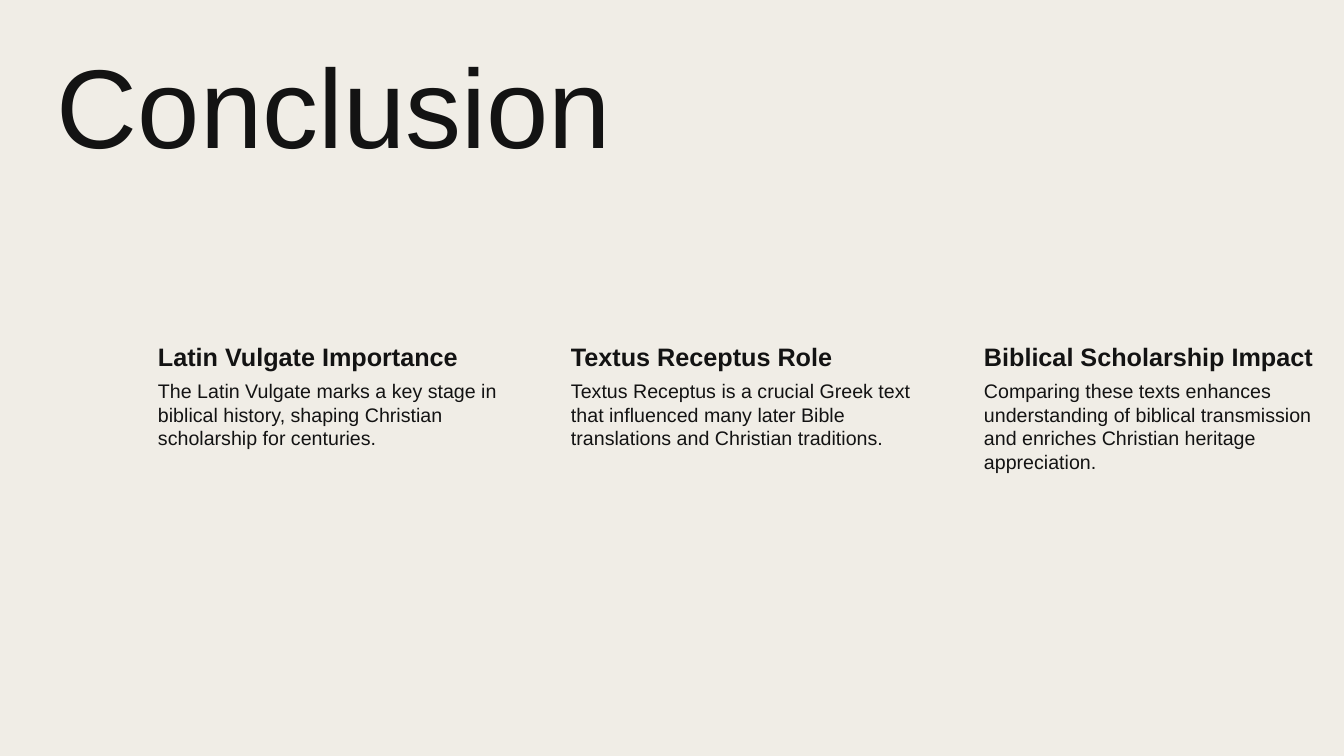
"""Build the Conclusion slide with three columns of closing points."""
import dataclasses

import pptx
import pptx.dml.color
import pptx.enum.text
import pptx.util

SCALE = 914400 / 100.8
INK = "131313"
PAPER = "F0EDE6"
LEFT, STEP, WIDTH = 143, 413, 375


@dataclasses.dataclass(frozen=True)
class Style:
    """Give the format of one kind of text."""

    size: int
    bold: bool
    insets: tuple[int, int, int, int]
    line: float = 1.0


@dataclasses.dataclass(frozen=True)
class Point:
    """Hold one closing point."""

    head: str
    body: str


TITLE = Style(80, False, (10, 5, 10, 5), 0.9)
HEAD = Style(18, True, (15, 3, 3, 3))
BODY = Style(14, False, (15, 2, 2, 2))

POINTS = [
    Point(
        "Latin Vulgate Importance",
        "The Latin Vulgate marks a key stage in biblical history, "
        "shaping Christian scholarship for centuries.",
    ),
    Point(
        "Textus Receptus Role",
        "Textus Receptus is a crucial Greek text that influenced many "
        "later Bible translations and Christian traditions.",
    ),
    Point(
        "Biblical Scholarship Impact",
        "Comparing these texts enhances understanding of biblical "
        "transmission and enriches Christian heritage appreciation.",
    ),
]


def px(length: int) -> pptx.util.Emu:
    """Turn px into EMU."""
    return pptx.util.Emu(round(length * SCALE))


def color(code: str) -> pptx.dml.color.RGBColor:
    """Turn a hex string into a colour."""
    return pptx.dml.color.RGBColor.from_string(code)


def apply(target: object, values: dict[str, object]) -> None:
    """Set each format value on the target."""
    for name, value in values.items():
        setattr(target, name, value)


def write(slide, text: str, box: tuple[int, int, int, int], style: Style) -> None:
    """Add one text box in the given style."""
    frame = slide.shapes.add_textbox(*map(px, box)).text_frame
    sides = ("left", "top", "right", "bottom")
    margins = {f"margin_{side}": px(gap) for side, gap in zip(sides, style.insets)}
    anchor = pptx.enum.text.MSO_ANCHOR.TOP
    apply(frame, {"word_wrap": True, "vertical_anchor": anchor, **margins})
    para = frame.paragraphs[0]
    para.line_spacing = style.line
    run = para.add_run()
    run.text = text
    size = pptx.util.Pt(style.size)
    apply(run.font, {"name": "Arial", "size": size, "bold": style.bold})
    run.font.color.rgb = color(INK)


def main() -> None:
    """Build and save the slide."""
    deck = pptx.Presentation()
    apply(deck, {"slide_width": px(1344), "slide_height": px(756)})
    slide = deck.slides.add_slide(deck.slide_layouts[6])
    fill = slide.background.fill
    fill.solid()
    fill.fore_color.rgb = color(PAPER)
    write(slide, "Conclusion", (47, 47, 1200, 179), TITLE)
    for index, point in enumerate(POINTS):
        left = LEFT + index * STEP
        write(slide, point.head, (left, 338, WIDTH, 38), HEAD)
        write(slide, point.body, (left, 377, WIDTH, 267), BODY)
    deck.save("out.pptx")


if __name__ == "__main__":
    main()
